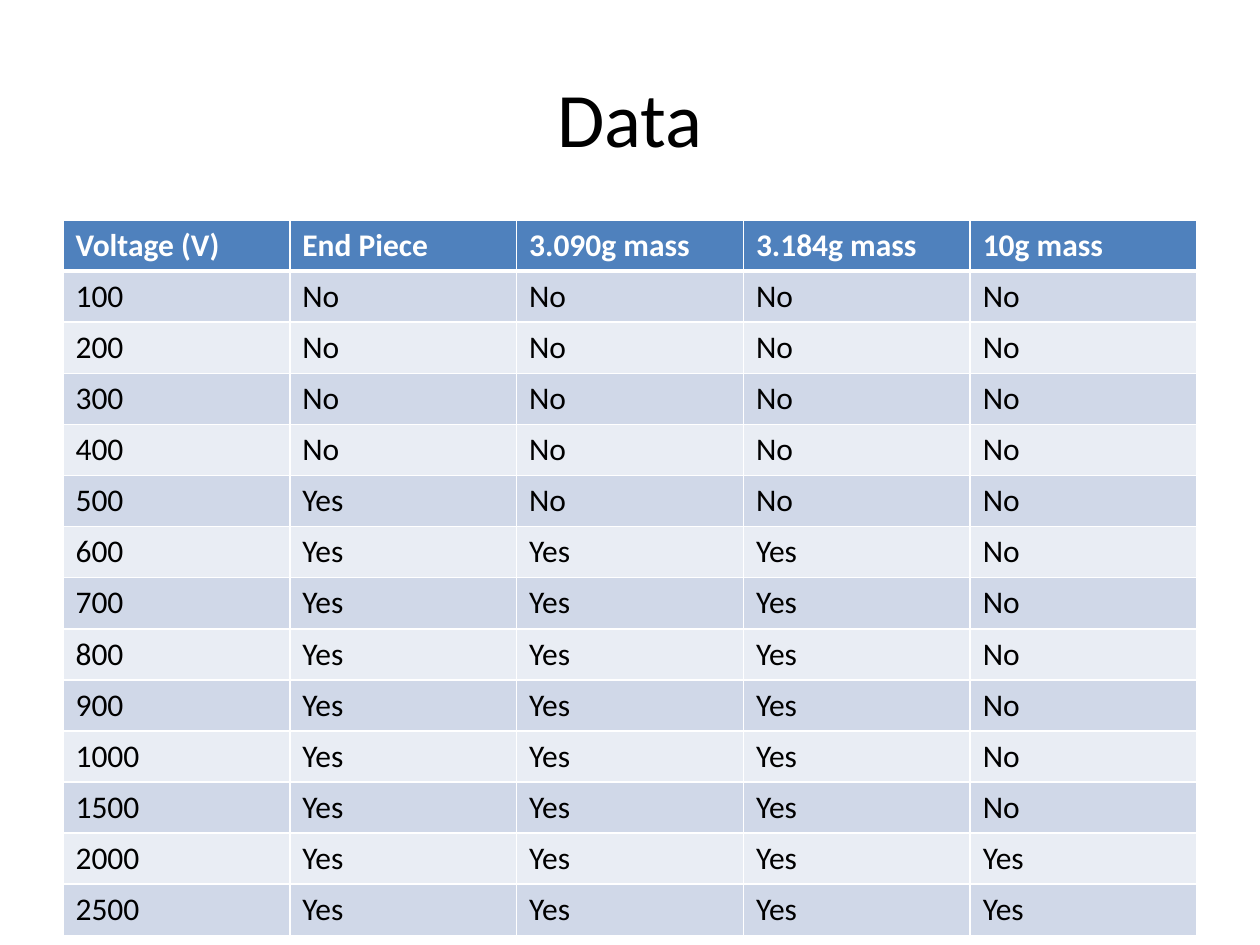
from lxml.etree import SubElement as Sub
from pptx import Presentation
from pptx.dml.color import RGBColor as RGB
from pptx.enum.text import MSO_ANCHOR as Anchor, PP_ALIGN as Align
from pptx.oxml.ns import qn
from pptx.util import Emu, Pt

PX = 914400 / 126
FONT = "Calibri"
BLACK = RGB(0, 0, 0)
WHITE = RGB(255, 255, 255)
BLUE = RGB(0x4F, 0x81, 0xBD)
BANDS = RGB(0xE9, 0xED, 0xF4), RGB(0xD0, 0xD8, 0xE8)

HEAD = ["Voltage (V)", "End Piece", "3.090g mass", "3.184g mass", "10g mass"]
VOLTS = [*range(100, 1001, 100), 1500, 2000, 2500]
LIFTS = [500, 600, 600, 2000]


def px(n):
    return Emu(round(n * PX))


def style(para, size, color, bold=False):
    font = para.font
    font.name = FONT
    font.size = Pt(size)
    font.bold = bold
    font.color.rgb = color


def edge(cell, side, width):
    line = Sub(cell._tc.get_or_add_tcPr(), qn(f"a:ln{side}"), w=str(Pt(width)))
    fill = Sub(line, qn("a:solidFill"))
    Sub(fill, qn("a:srgbClr"), val=str(WHITE))


def add_title(slide, box, text):
    title = slide.shapes.title
    title.left, title.top, title.width, title.height = map(px, box)
    frame = title.text_frame
    frame.text = text
    frame.vertical_anchor = Anchor.MIDDLE
    para = frame.paragraphs[0]
    para.alignment = Align.CENTER
    style(para, 44, BLACK)


def add_data(slide, box):
    rows = [HEAD]
    for volt in VOLTS:
        rows.append([str(volt)] + ["Yes" if volt >= lift else "No" for lift in LIFTS])
    left, top, width, height = box
    grid = slide.shapes.add_table(len(rows), len(HEAD), *map(px, box)).table
    for col in grid.columns:
        col.width = px(width / len(HEAD))
    for r, row in enumerate(rows):
        grid.rows[r].height = px(height / len(rows))
        head = r == 0
        for c, text in enumerate(row):
            cell = grid.cell(r, c)
            cell.text = text
            style(cell.text_frame.paragraphs[0], 18, WHITE if head else BLACK, head)
            for side in "LRTB":
                thick = (r, side) in [(0, "B"), (1, "T")]
                edge(cell, side, 3 if thick else 1)
            cell.fill.solid()
            cell.fill.fore_color.rgb = BLUE if head else BANDS[r % 2]


def main():
    deck = Presentation()
    deck.slide_width, deck.slide_height = px(1260), px(945)
    slide = deck.slides.add_slide(deck.slide_layouts[5])
    add_title(slide, (63, 38, 1134, 157), "Data")
    add_data(slide, (63, 220, 1134, 715))
    deck.save("out.pptx")


if __name__ == "__main__":
    main()
